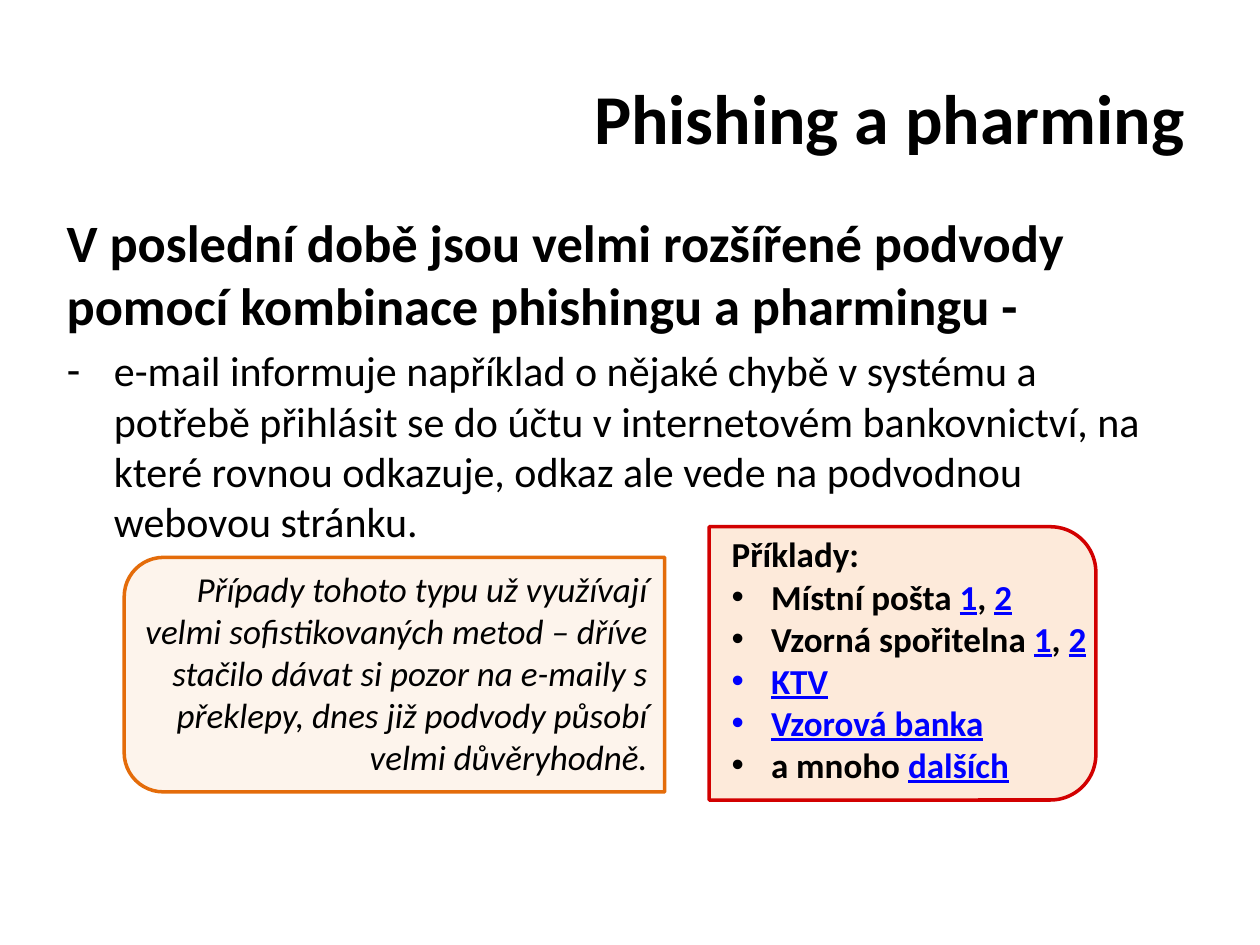
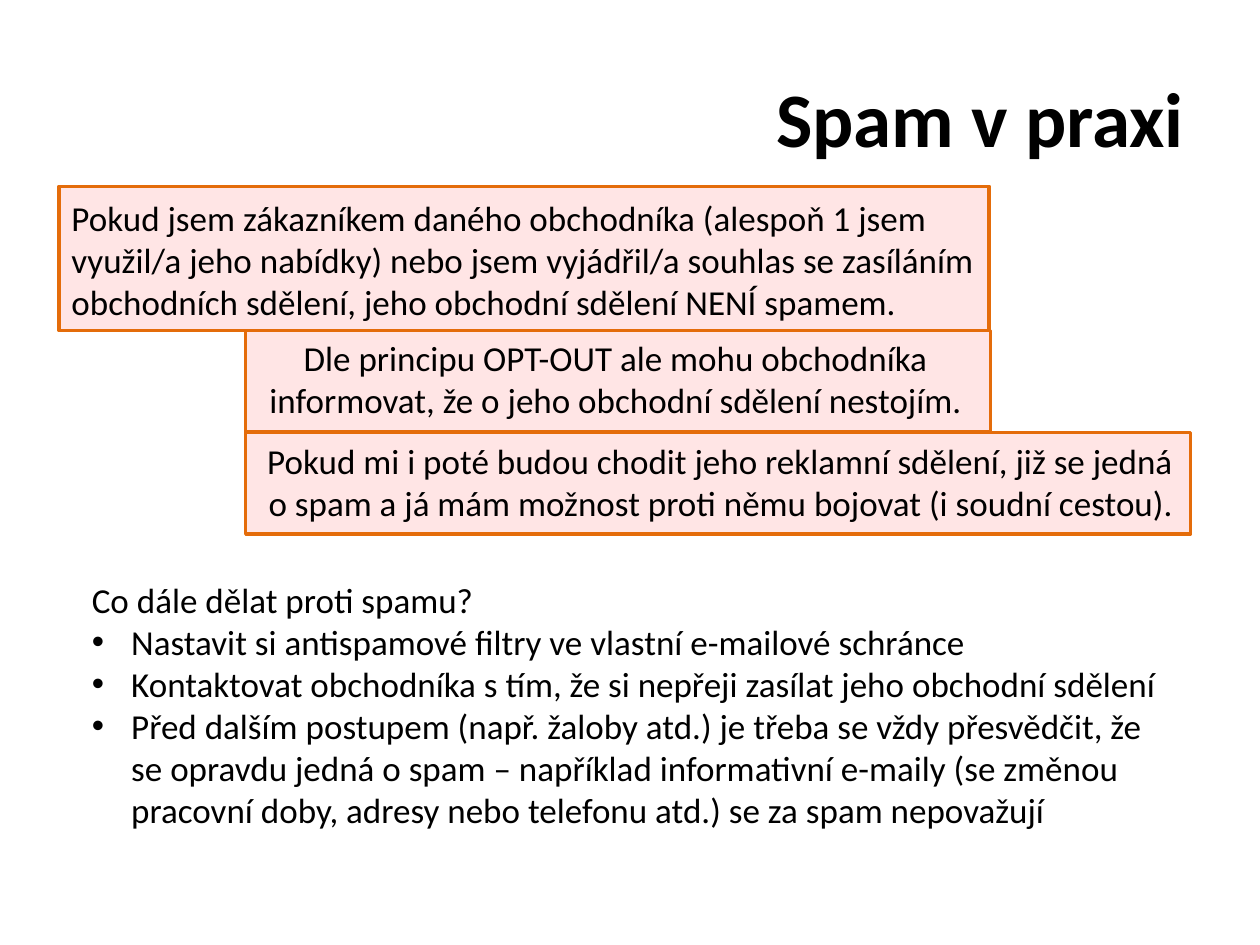
from lxml.etree import SubElement
from pptx import Presentation
from pptx.dml.color import RGBColor
from pptx.enum.shapes import MSO_SHAPE
from pptx.enum.text import MSO_ANCHOR, PP_ALIGN
from pptx.oxml.ns import qn
from pptx.util import Pt

COLORS = {
    "text": "000000",
    "link": "0000FF",
    "orange": "E46C0A",
    "crimson": "D20000",
    "peach": "FCD5B5",
    "cream": "FDEADA",
    "red": "FF0000",
}
FONT = "Calibri"
LINE_WIDTH = 2
LIST_INDENT = 22.5


def rgb(name):
    return RGBColor.from_string(COLORS[name])


def apply(target, values):
    for name, value in values.items():
        setattr(target, name, value)


def set_bullet(paragraph, character, indent):
    properties = paragraph._p.get_or_add_pPr()
    properties.set("marL", str(Pt(indent)))
    properties.set("indent", str(-Pt(indent)))
    SubElement(properties, qn("a:buFont"), typeface="Arial")
    SubElement(properties, qn("a:buChar"), char=character)


class SlideBuilder:
    def __init__(self, presentation):
        self.presentation = presentation
        self.slide = None

    def new_slide(self, title, title_size):
        self.slide = self.presentation.slides.add_slide(
            self.presentation.slide_layouts[6])
        frame = self.text_box((36, 21.6, 648, 90))
        frame.vertical_anchor = MSO_ANCHOR.MIDDLE
        self.paragraph(frame, title, title_size, PP_ALIGN.RIGHT, bold=True)

    def panel(self, box, fill, opacity, line, kind=MSO_SHAPE.RECTANGLE, rotation=0):
        """Draw a translucent panel; box is the area it covers once turned."""
        left, top, width, height = box
        if rotation in (90, 270):
            left += (width - height) / 2
            top += (height - width) / 2
            width, height = height, width
        shape = self.slide.shapes.add_shape(
            kind, Pt(left), Pt(top), Pt(width), Pt(height))
        shape.rotation = rotation
        shape.shadow.inherit = False
        shape.fill.solid()
        shape.fill.fore_color.rgb = rgb(fill)
        color = shape._element.spPr.find(qn("a:solidFill"))[0]
        SubElement(color, qn("a:alpha"), val=str(opacity * 1000))
        shape.line.color.rgb = rgb(line)
        shape.line.width = Pt(LINE_WIDTH)

    def text_box(self, box):
        frame = self.slide.shapes.add_textbox(*map(Pt, box)).text_frame
        frame.word_wrap = True
        return frame

    def paragraph(self, frame, text, size=20, alignment=PP_ALIGN.LEFT,
                  bullet=None, indent=LIST_INDENT, space_before=0, **font):
        """Add a paragraph; every second piece between bars looks like a link."""
        first = frame.paragraphs[0]
        paragraph = frame.add_paragraph() if first.runs else first
        apply(paragraph, {"alignment": alignment, "space_before": Pt(space_before)})
        if bullet:
            set_bullet(paragraph, bullet, indent)
        for index, piece in enumerate(text.split("|")):
            if not piece:
                continue
            is_link = index % 2 == 1
            run = paragraph.add_run()
            run.text = piece
            apply(run.font, {"name": FONT, "size": Pt(size), "underline": is_link, **font})
            run.font.color.rgb = rgb("link" if is_link else "text")

    def titled_list(self, box, heading, items, **font):
        frame = self.text_box(box)
        self.paragraph(frame, heading, **font)
        for item in items:
            self.paragraph(frame, item, bullet="•", **font)


def build_phishing(builder):
    builder.new_slide("Phishing a pharming", 40)
    rounded = MSO_SHAPE.ROUND_2_SAME_RECTANGLE
    builder.panel((405.2, 301, 221, 156.2), "peach", 49, "crimson", rounded, 90)
    builder.panel((71, 318.5, 308.8, 134), "cream", 51, "orange", rounded, 270)

    body = builder.text_box((31, 116.6, 648, 193.7))
    builder.paragraph(
        body, "V poslední době jsou velmi rozšířené podvody pomocí kombinace "
        "phishingu a pharmingu -", 30, space_before=6, bold=True)
    builder.paragraph(
        body, "e-mail informuje například o nějaké chybě v systému a potřebě "
        "přihlásit se do účtu v internetovém bankovnictví, na které rovnou "
        "odkazuje, odkaz ale vede na podvodnou webovou stránku.",
        24, bullet="-", indent=27, space_before=4.8)

    remark = builder.text_box((71.3, 321, 306, 128))
    builder.paragraph(
        remark, "Případy tohoto typu už využívají velmi sofistikovaných metod – "
        "dříve stačilo dávat si pozor na e-maily s překlepy, dnes již podvody "
        "působí velmi důvěryhodně.", alignment=PP_ALIGN.RIGHT, italic=True)
    builder.titled_list(
        (411, 301, 229, 152.6), "Příklady:",
        ["Místní pošta |1|, |2", "Vzorná spořitelna |1|, |2", "|KTV",
         "|Vzorová banka", "a mnoho |dalších"], bold=True)


def build_spam(builder):
    builder.new_slide("Spam v praxi", 44)
    panels = [
        (33.8, 106.5, 531.5, 82.5),
        (140.4, 188.8, 425.5, 58.2),
        (140.4, 247, 540, 58.2),
    ]
    for box in reversed(panels):
        builder.panel(box, "red", 10, "orange")

    steps = [
        ((33.8, 108.7, 544.3, 80), PP_ALIGN.LEFT,
         "Pokud jsem zákazníkem daného obchodníka (alespoň 1 jsem využil/a jeho "
         "nabídky) nebo jsem vyjádřil/a souhlas se zasíláním obchodních sdělení, "
         "jeho obchodní sdělení NENÍ spamem."),
        ((139, 188.6, 425.5, 77.8), PP_ALIGN.CENTER,
         "Dle principu OPT-OUT ale mohu obchodníka informovat, že o jeho "
         "obchodní sdělení nestojím."),
        ((141.8, 247.7, 535.7, 55.4), PP_ALIGN.RIGHT,
         "Pokud mi i poté budou chodit jeho reklamní sdělení, již se jedná o spam "
         "a já mám možnost proti němu bojovat (i soudní cestou)."),
    ]
    for box, alignment, text in steps:
        builder.paragraph(builder.text_box(box), text, alignment=alignment)

    builder.titled_list(
        (45.4, 326.9, 636.5, 174.2), "Co dále dělat proti spamu?",
        ["Nastavit si antispamové filtry ve vlastní e-mailové schránce",
         "Kontaktovat obchodníka s tím, že si nepřeji zasílat jeho obchodní sdělení",
         "Před dalším postupem (např. žaloby atd.) je třeba se vždy přesvědčit, že "
         "se opravdu jedná o spam – například informativní e-maily (se změnou "
         "pracovní doby, adresy nebo telefonu atd.) se za spam nepovažují"])


def main():
    presentation = Presentation()
    apply(presentation, {"slide_width": Pt(720), "slide_height": Pt(540)})
    builder = SlideBuilder(presentation)
    build_phishing(builder)
    build_spam(builder)
    presentation.save("out.pptx")


if __name__ == "__main__":
    main()
